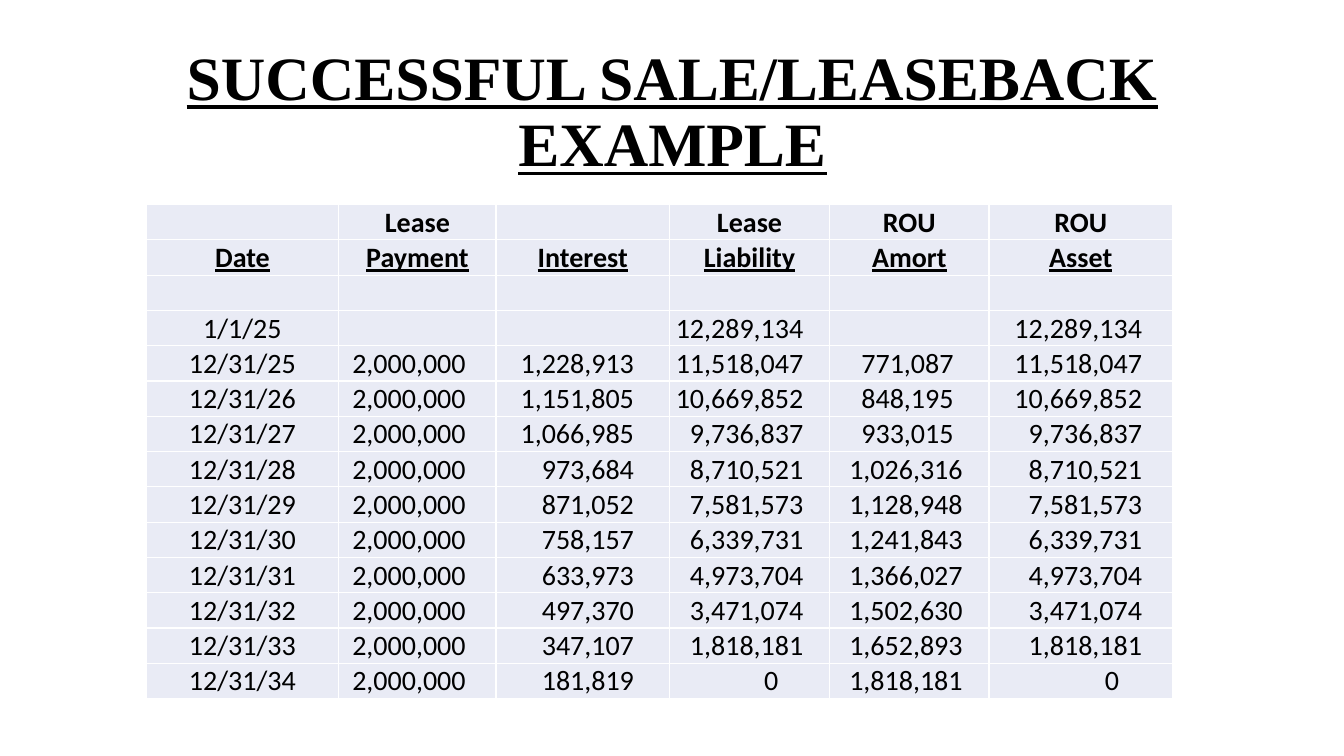
from lxml import etree
from pptx import Presentation
from pptx.dml.color import RGBColor
from pptx.enum.text import MSO_ANCHOR, PP_ALIGN
from pptx.oxml.ns import qn
from pptx.util import Inches, Pt

CENTER, RIGHT = PP_ALIGN.CENTER, PP_ALIGN.RIGHT
MIDDLE, BOTTOM = MSO_ANCHOR.MIDDLE, MSO_ANCHOR.BOTTOM
COLORS = {"text": "000000", "cell": "E9EBF5", "border": "FFFFFF"}

COL_WIDTHS = [1.91, 1.56, 1.72, 1.59, 1.58, 1.82]
ROW_HEIGHT = 0.35
HEADER_ROWS = 3
ROWS = [
    ["", "Lease", "", "Lease", "ROU", "ROU"],
    ["Date", "Payment", "Interest", "Liability", "Amort", "Asset"],
    [""] * 6,
    ["1/1/25", "", "", "12,289,134", "", "12,289,134"],
    ["12/31/25", "2,000,000", "1,228,913", "11,518,047", "771,087", "11,518,047"],
    ["12/31/26", "2,000,000", "1,151,805", "10,669,852", "848,195", "10,669,852"],
    ["12/31/27", "2,000,000", "1,066,985", "9,736,837", "933,015", "9,736,837"],
    ["12/31/28", "2,000,000", "973,684", "8,710,521", "1,026,316", "8,710,521"],
    ["12/31/29", "2,000,000", "871,052", "7,581,573", "1,128,948", "7,581,573"],
    ["12/31/30", "2,000,000", "758,157", "6,339,731", "1,241,843", "6,339,731"],
    ["12/31/31", "2,000,000", "633,973", "4,973,704", "1,366,027", "4,973,704"],
    ["12/31/32", "2,000,000", "497,370", "3,471,074", "1,502,630", "3,471,074"],
    ["12/31/33", "2,000,000", "347,107", "1,818,181", "1,652,893", "1,818,181"],
    ["12/31/34", "2,000,000", "181,819", "0", "1,818,181", "0"],
]
# Right insets of the figures by column; short figures sit further in
INSETS = [0.01, 0.3, 0.35, 0.26, 0.26, 0.3]
SHORT_INSETS = {(3, "0"): 0.51, (5, "0"): 0.53,
                (4, "771,087"): 0.35, (4, "848,195"): 0.35, (4, "933,015"): 0.35}


def style_text(p, font, size, bold, underline, align):
    p.alignment = align
    p.font.name = font
    p.font.size = Pt(size)
    p.font.bold = bold
    p.font.underline = underline
    p.font.color.rgb = RGBColor.from_string(COLORS["text"])


def style_cell(cell):
    tc_pr = cell._tc.get_or_add_tcPr()
    for side in ("a:lnL", "a:lnR", "a:lnT", "a:lnB"):
        ln = etree.SubElement(tc_pr, qn(side), w=str(Pt(1)))
        fill = etree.SubElement(ln, qn("a:solidFill"))
        etree.SubElement(fill, qn("a:srgbClr"), val=COLORS["border"])
    cell.fill.solid()
    cell.fill.fore_color.rgb = RGBColor.from_string(COLORS["cell"])
    cell.vertical_anchor = BOTTOM
    cell.margin_left = cell.margin_right = cell.margin_top = Inches(0.01)
    cell.margin_bottom = 0


prs = Presentation()
prs.slide_width, prs.slide_height = Inches(13.33), Inches(7.5)
s = prs.slides.add_slide(prs.slide_layouts[6])

# Title
sp = s.shapes.add_textbox(Inches(0.92), Inches(0.4), Inches(11.5), Inches(1.45))
tf = sp.text_frame
tf.word_wrap = True
tf.vertical_anchor = MIDDLE
p = tf.paragraphs[0]
p.text = "SUCCESSFUL SALE/LEASEBACK\vEXAMPLE"
p.line_spacing = 0.9
style_text(p, "Times New Roman", 44, True, True, CENTER)

# Lease schedule
table = s.shapes.add_table(
    len(ROWS), len(COL_WIDTHS), Inches(1.45), Inches(2.03),
    Inches(sum(COL_WIDTHS)), Inches(ROW_HEIGHT * len(ROWS))).table
table.first_row = table.horz_banding = False
for column, width in zip(table.columns, COL_WIDTHS):
    column.width = Inches(width)

for i, values in enumerate(ROWS):
    table.rows[i].height = Inches(ROW_HEIGHT)
    header = i < HEADER_ROWS
    for j, value in enumerate(values):
        cell = table.cell(i, j)
        style_cell(cell)
        figure = not header and j > 0
        if figure:
            cell.margin_right = Inches(SHORT_INSETS.get((j, value), INSETS[j]))
        p = cell.text_frame.paragraphs[0]
        p.text = value
        style_text(p, "Calibri", 20, header, i == 1, RIGHT if figure else CENTER)

prs.save("out.pptx")
